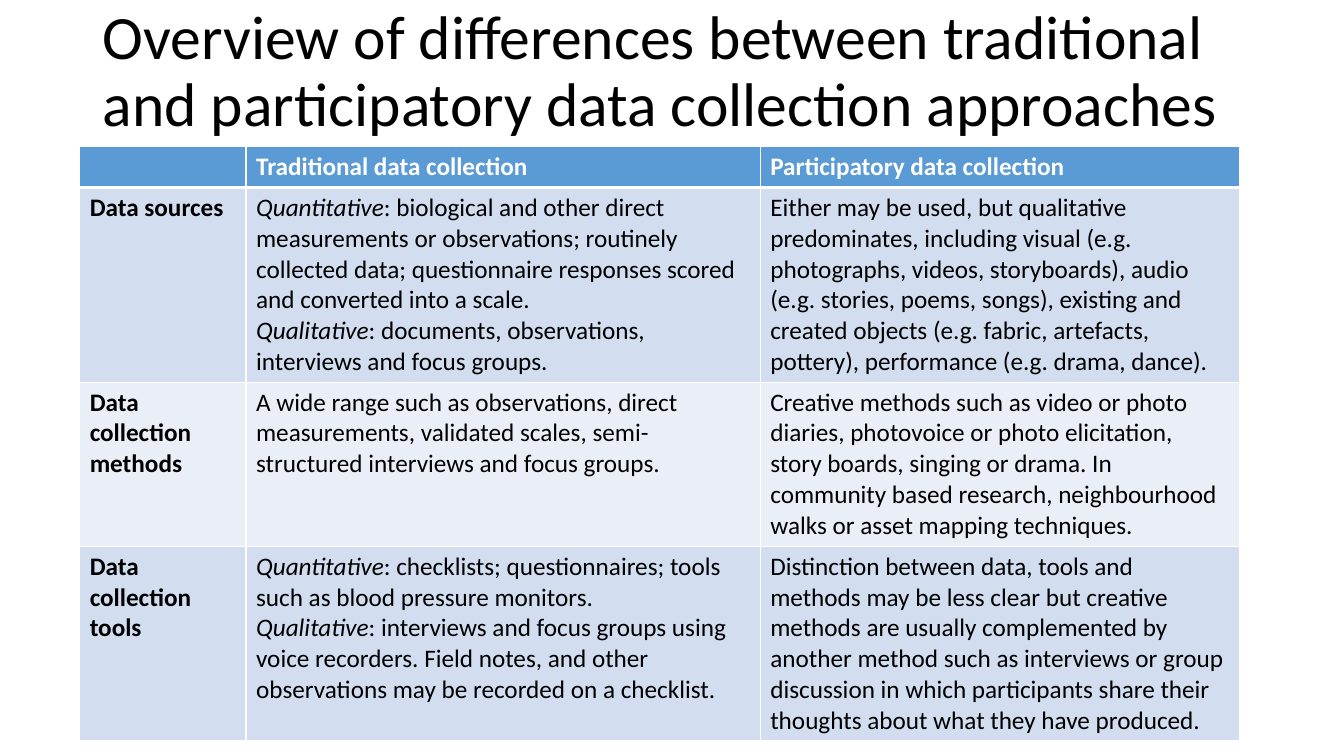
"""Build a slide comparing traditional and participatory data collection."""
from dataclasses import dataclass

from lxml.etree import SubElement
from pptx import Presentation
from pptx.dml.color import RGBColor
from pptx.enum.text import MSO_ANCHOR, MSO_AUTO_SIZE, PP_ALIGN
from pptx.oxml.ns import qn
from pptx.slide import Slide
from pptx.table import _Cell as Cell
from pptx.text.text import _Paragraph as Paragraph
from pptx.util import Emu, Pt

PX = 9144
FONT = "Calibri"
COLOURS = {
    "ink": "000000",
    "paper": "FFFFFF",
    "header": "5B9BD5",
    "band": "D2DEEF",
    "light band": "EAEFF7",
}
COLUMN_WIDTHS = (165, 510, 475)
TABLE_LEFT, TABLE_TOP = 79, 145
RULE, HEADER_RULE = 1, 3


@dataclass(frozen=True)
class Phrase:
    text: str
    italic: bool = False


@dataclass(frozen=True)
class Row:
    height: int
    fill: str
    topic: str
    traditional: tuple[tuple[Phrase, ...], ...]
    participatory: str
    ink: str = "ink"
    is_header: bool = False


def plain(text: str) -> tuple[tuple[Phrase, ...], ...]:
    return ((Phrase(text),),)


def by_kind(quantitative: str, qualitative: str) -> tuple[tuple[Phrase, ...], ...]:
    return (
        (Phrase("Quantitative", italic=True), Phrase(f": {quantitative}")),
        (Phrase("Qualitative", italic=True), Phrase(f": {qualitative}")),
    )


TITLE = "Overview of differences between traditional and participatory data collection approaches"
ROWS = (
    Row(41, "header", "", plain("Traditional data collection"),
        "Participatory data collection", ink="paper", is_header=True),
    Row(192, "band", "Data sources",
        by_kind("biological and other direct measurements or observations; routinely "
                "collected data; questionnaire responses scored and converted into a scale.",
                "documents, observations, interviews and focus groups."),
        "Either may be used, but qualitative predominates, including visual (e.g. "
        "photographs, videos, storyboards), audio (e.g. stories, poems, songs), existing "
        "and created objects (e.g. fabric, artefacts, pottery), performance (e.g. drama, "
        "dance)."),
    Row(163, "light band", "Data collection methods",
        plain("A wide range such as observations, direct measurements, validated scales, "
              "semi-structured interviews and focus groups."),
        "Creative methods such as video or photo diaries, photovoice or photo elicitation, "
        "story boards, singing or drama. In community based research, neighbourhood walks "
        "or asset mapping techniques."),
    Row(192, "band", "Data collection tools",
        by_kind("checklists; questionnaires; tools such as blood pressure monitors.",
                "interviews and focus groups using voice recorders. Field notes, and other "
                "observations may be recorded on a checklist."),
        "Distinction between data, tools and methods may be less clear but creative methods "
        "are usually complemented by another method such as interviews or group discussion "
        "in which participants share their thoughts about what they have produced."),
)


def px(length: int) -> Emu:
    return Emu(length * PX)


def colour(name: str) -> RGBColor:
    return RGBColor.from_string(COLOURS[name])


def add_phrase(paragraph: Paragraph, phrase: Phrase, size: int, ink: str,
               bold: bool = False) -> None:
    run = paragraph.add_run()
    run.text = phrase.text
    run.font.name = FONT
    run.font.size = Pt(size)
    run.font.bold = bold
    run.font.italic = phrase.italic
    run.font.color.rgb = colour(ink)


def add_title(slide: Slide) -> None:
    title = slide.shapes.title
    title.left, title.top, title.width, title.height = map(px, (92, 0, 1215, 145))
    frame = title.text_frame
    frame.word_wrap = True
    frame.auto_size = MSO_AUTO_SIZE.NONE
    frame.vertical_anchor = MSO_ANCHOR.MIDDLE
    heading = frame.paragraphs[0]
    heading.alignment = PP_ALIGN.LEFT
    heading.line_spacing = 0.9
    add_phrase(heading, Phrase(TITLE), 44, "ink")


def rule_cell(cell: Cell, top: int, bottom: int) -> None:
    properties = cell._tc.get_or_add_tcPr()
    for side, points in (("L", RULE), ("R", RULE), ("T", top), ("B", bottom)):
        line = SubElement(properties, qn(f"a:ln{side}"), w=str(Pt(points)))
        fill = SubElement(line, qn("a:solidFill"))
        SubElement(fill, qn("a:srgbClr"), val=COLOURS["paper"])


def fill_cell(cell: Cell, row: Row, paragraphs: tuple[tuple[Phrase, ...], ...],
              bold: bool) -> None:
    cell.fill.solid()
    cell.fill.fore_color.rgb = colour(row.fill)
    frame = cell.text_frame
    for index, phrases in enumerate(paragraphs):
        paragraph = frame.add_paragraph() if index else frame.paragraphs[0]
        for phrase in phrases:
            if phrase.text:
                add_phrase(paragraph, phrase, 18, row.ink, bold)


def add_comparison(slide: Slide) -> None:
    comparison = slide.shapes.add_table(
        len(ROWS), len(COLUMN_WIDTHS), px(TABLE_LEFT), px(TABLE_TOP),
        px(sum(COLUMN_WIDTHS)), px(sum(row.height for row in ROWS))).table
    for column, width in zip(comparison.columns, COLUMN_WIDTHS):
        column.width = px(width)
    for r, row in enumerate(ROWS):
        comparison.rows[r].height = px(row.height)
        top = HEADER_RULE if r and ROWS[r - 1].is_header else RULE
        bottom = HEADER_RULE if row.is_header else RULE
        contents = (plain(row.topic), row.traditional, plain(row.participatory))
        for c, paragraphs in enumerate(contents):
            cell = comparison.cell(r, c)
            rule_cell(cell, top, bottom)
            fill_cell(cell, row, paragraphs, bold=row.is_header or c == 0)


def main() -> None:
    deck = Presentation()
    deck.slide_width, deck.slide_height = px(1333), px(750)
    slide = deck.slides.add_slide(deck.slide_layouts.get_by_name("Title Only"))
    add_title(slide)
    add_comparison(slide)
    deck.save("out.pptx")


if __name__ == "__main__":
    main()
